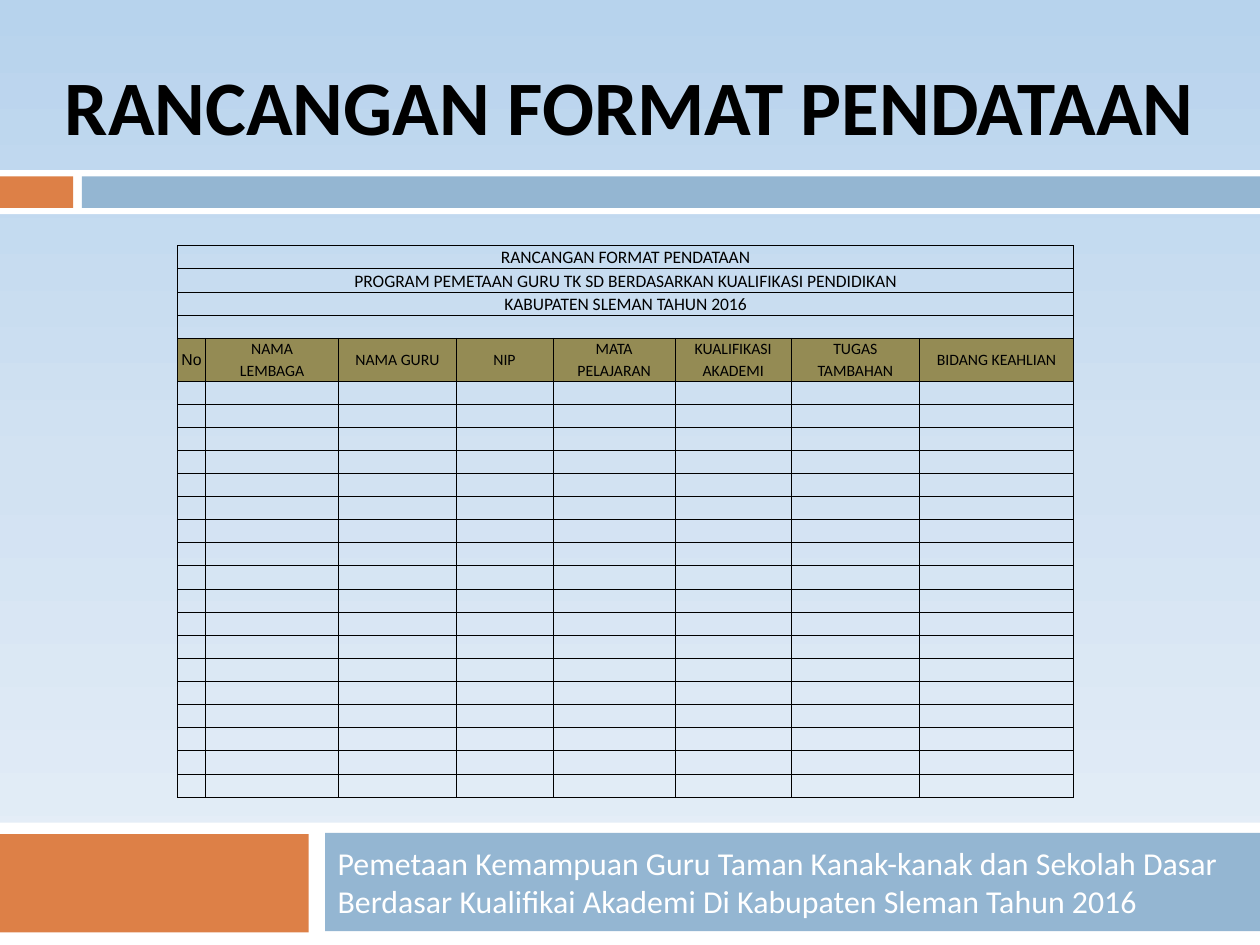
from copy import deepcopy
from lxml import etree
from pptx import Presentation, util as u
from pptx.dml.color import RGBColor
from pptx.enum import shapes, text
from pptx.oxml.ns import qn

Inches = u.Inches
mid = text.MSO_ANCHOR.MIDDLE
center = text.PP_ALIGN.CENTER


def rgb(code):
    return RGBColor.from_string(code)


def style(para, size, color="000000", name="Calibri", align=center):
    para.alignment = align
    para.font.size = u.Pt(size)
    para.font.name = name
    para.font.color.rgb = rgb(color)


deck = Presentation()
deck.slide_width, deck.slide_height = Inches(10), Inches(7.5)
slide = deck.slides.add_slide(deck.slide_layouts[0])

back = slide.background.fill
back.gradient()
back.gradient_angle = 270
stops = slide._element.find(".//" + qn("a:gsLst"))
stops.append(deepcopy(stops[-1]))
shades = [(0, "B7D3ED"), (0.5, "D2E2F2"), (1, "E8F0F8")]
for stop, (place, color) in zip(back.gradient_stops, shades):
    stop.position = place
    stop.color.rgb = rgb(color)

bars = [
    (0, 1.35, 10, 0.35, "FFFFFF"),
    (0, 1.4, 0.58, 0.25, "DD8047"),
    (0.65, 1.4, 9.35, 0.25, "94B6D2"),
    (0, 6.53, 10, 0.97, "FFFFFF"),
    (-0.01, 6.62, 2.46, 0.78, "DD8047"),
    (2.58, 6.61, 7.42, 0.78, "94B6D2"),
]
for *box, color in bars:
    bar = slide.shapes.add_shape(shapes.MSO_SHAPE.RECTANGLE, *map(Inches, box))
    bar.shadow.inherit = False
    bar.fill.solid()
    bar.fill.fore_color.rgb = rgb(color)
    bar.line.fill.background()

title, sub = slide.placeholders
words = [
    (title, (0, 0, 10, 1.25), "RANCANGAN FORMAT PENDATAAN", text.MSO_ANCHOR.BOTTOM),
    (sub, (2.58, 6.62, 7.33, 0.75),
     "Pemetaan Kemampuan Guru Taman Kanak-kanak dan Sekolah Dasar "
     "Berdasar Kualifikai Akademi Di Kabupaten Sleman Tahun 2016", mid),
]
for holder, box, line, anchor in words:
    holder.left, holder.top, holder.width, holder.height = map(Inches, box)
    frame = holder.text_frame
    frame.text = line
    frame.word_wrap = True
    frame.auto_size = text.MSO_AUTO_SIZE.NONE
    frame.vertical_anchor = anchor
    slide.shapes._spTree.append(holder._element)
style(title.text_frame.paragraphs[0], 44)
title.text_frame.paragraphs[0].font.bold = True
style(sub.text_frame.paragraphs[0], 18.2, "FFFFFF", align=text.PP_ALIGN.LEFT)
sub.text_frame.paragraphs[0].space_before = u.Pt(7)

widths = [0.22, 1.06, 0.93, 0.77, 0.97, 0.92, 1.02, 1.22]
heads = ["RANCANGAN FORMAT PENDATAAN",
         "PROGRAM PEMETAAN GURU TK SD BERDASARKAN KUALIFIKASI PENDIDIKAN",
         "KABUPATEN SLEMAN TAHUN 2016", ""]
upper = ["No", "NAMA", "NAMA GURU", "NIP", "MATA", "KUALIFIKASI", "TUGAS", "BIDANG KEAHLIAN"]
lower = {1: "LEMBAGA", 4: "PELAJARAN", 5: "AKADEMI", 6: "TAMBAHAN"}
count, first, second = 24, 4, 5
slim = 0.17
tall = (4.38 - 2 * slim) / (count - 2)

table = slide.shapes.add_table(count, len(widths), Inches(1.41), Inches(1.95),
                               Inches(7.11), Inches(4.38)).table
table.first_row = table.horz_banding = False
for col, width in zip(table.columns, widths):
    col.width = Inches(width)
for r, row in enumerate(table.rows):
    row.height = Inches(slim if r in (first, second) else tall)

for r, line in enumerate(heads):
    table.cell(r, 0).text = line
    table.cell(r, 0).merge(table.cell(r, len(widths) - 1))
for c, line in enumerate(upper):
    table.cell(first, c).text = line
    if c in lower:
        table.cell(second, c).text = lower[c]
    else:
        table.cell(first, c).merge(table.cell(second, c))

for r in range(count):
    for c in range(len(widths)):
        cell = table.cell(r, c)
        head = r in (first, second)
        cell.margin_left = cell.margin_top = cell.margin_right = Inches(0.01)
        cell.margin_bottom = 0
        cell.vertical_anchor = text.MSO_ANCHOR.BOTTOM if r in (1, 2) else mid
        style(cell.text_frame.paragraphs[0], 10 if r < first else 9 if head else 8,
              name="Arial" if head and c == 0 else "Calibri")
        props = cell._tc.get_or_add_tcPr()
        for side in "LRTB":
            edge = etree.SubElement(props, qn("a:ln" + side), w=str(u.Pt(0.5)))
            if c in lower and (r, side) in ((first, "B"), (second, "T")):
                etree.SubElement(edge, qn("a:noFill"))
            else:
                fill = etree.SubElement(edge, qn("a:solidFill"))
                etree.SubElement(fill, qn("a:srgbClr"), val="000000")
        if head:
            cell.fill.solid()
            cell.fill.fore_color.rgb = rgb("948B54")
        else:
            cell.fill.background()

deck.save("out.pptx")
